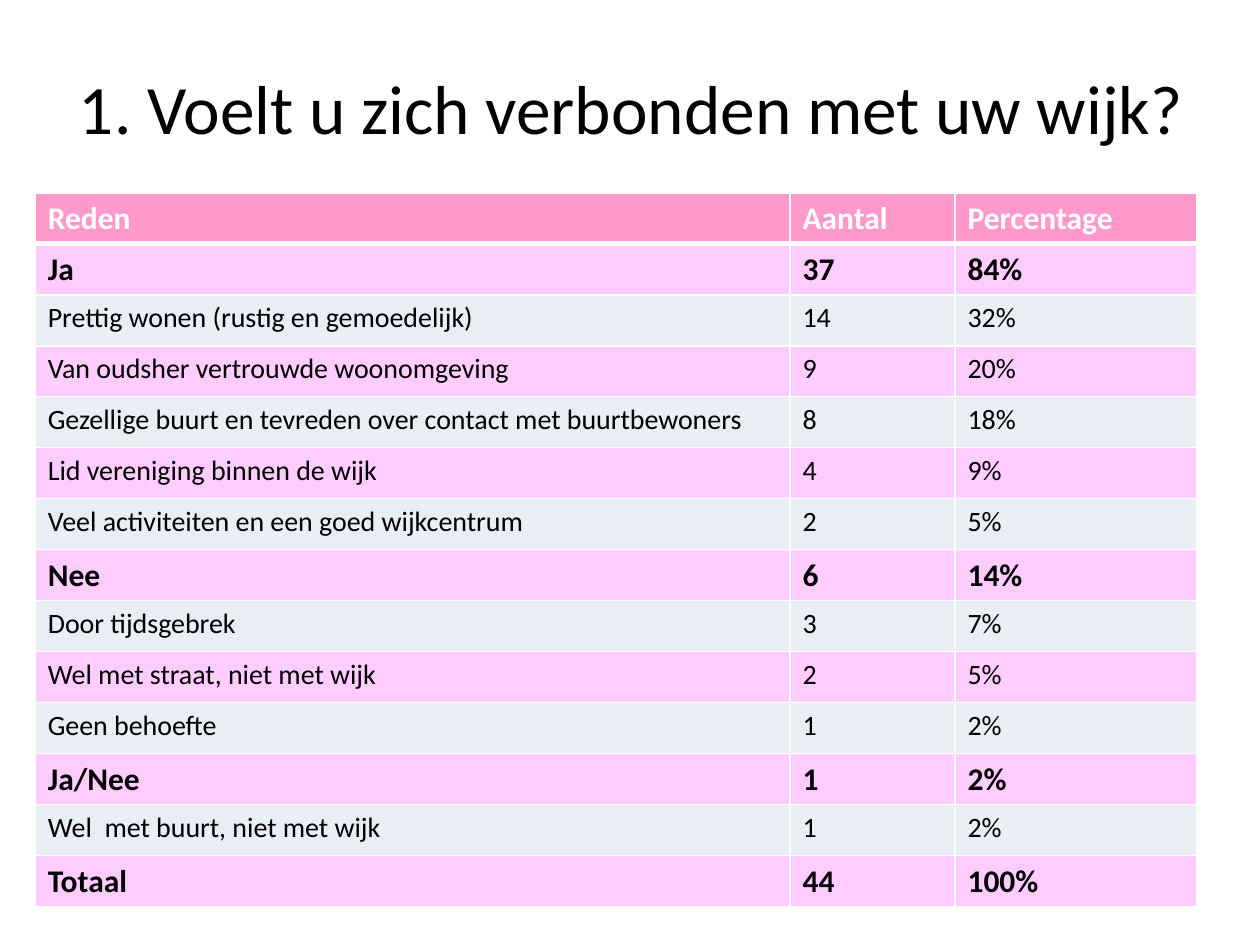
from pptx import Presentation
from pptx.dml.color import RGBColor
from pptx.enum.text import MSO_ANCHOR, PP_ALIGN
from pptx.oxml import parse_xml
from pptx.oxml.ns import nsdecls
from pptx.util import Inches, Pt

TITLE = "1. Voelt u zich verbonden met uw wijk?"
HEADER = ("Reden", "Aantal", "Percentage")
GROUPS = [
    (("Ja", "37", "84%"), [
        ("Prettig wonen (rustig en gemoedelijk)", "14", "32%"),
        ("Van oudsher vertrouwde woonomgeving", "9", "20%"),
        ("Gezellige buurt en tevreden over contact met buurtbewoners", "8", "18%"),
        ("Lid vereniging binnen de wijk", "4", "9%"),
        ("Veel activiteiten en een goed wijkcentrum", "2", "5%"),
    ]),
    (("Nee", "6", "14%"), [
        ("Door tijdsgebrek", "3", "7%"),
        ("Wel met straat, niet met wijk", "2", "5%"),
        ("Geen behoefte", "1", "2%"),
    ]),
    (("Ja/Nee", "1", "2%"), [
        ("Wel  met buurt, niet met wijk", "1", "2%"),
    ]),
    (("Totaal", "44", "100%"), []),
]


def color(value):
    return RGBColor.from_string(value)


def write_text(frame, text, *, font, size, fill, bold=False, align=PP_ALIGN.LEFT):
    paragraph = frame.paragraphs[0]
    paragraph.alignment = align
    run = paragraph.add_run()
    run.text = text
    run.font.name = font
    run.font.size = Pt(size)
    run.font.bold = bold
    run.font.color.rgb = color(fill)


def set_borders(cell, widths, line_color):
    properties = cell._tc.get_or_add_tcPr()
    for index, (side, width) in enumerate(widths.items()):
        border = parse_xml(
            f'<a:{side} {nsdecls("a")} w="{Pt(width)}"><a:solidFill>'
            f'<a:srgbClr val="{line_color}"/></a:solidFill></a:{side}>'
        )
        properties.insert(index, border)


class SurveySlide:
    font = "Calibri"
    ink = "000000"
    white = "FFFFFF"
    header_fill = "FF99CC"
    band_fills = ("E9EDF4", "FFCCFF")

    def __init__(self, presentation):
        self.slide = presentation.slides.add_slide(presentation.slide_layouts[6])

    def add_title(self, text, left, top, width, height):
        shape = self.slide.shapes.add_textbox(
            Inches(left), Inches(top), Inches(width), Inches(height))
        frame = shape.text_frame
        frame.word_wrap = True
        frame.vertical_anchor = MSO_ANCHOR.TOP
        frame.margin_top = 0
        write_text(frame, text, font=self.font, size=39.6, fill=self.ink,
                   align=PP_ALIGN.CENTER)

    def add_table(self, header, groups, left, top, column_widths, height):
        rows = [(header, True)]
        for summary, reasons in groups:
            rows.append((summary, True))
            rows.extend((reason, False) for reason in reasons)
        table = self.slide.shapes.add_table(
            len(rows), len(header), Inches(left), Inches(top),
            Inches(sum(column_widths)), Inches(height)).table
        for column, width in zip(table.columns, column_widths):
            column.width = Inches(width)
        for index, (values, bold) in enumerate(rows):
            for column, value in enumerate(values):
                self.fill_cell(table.cell(index, column), value, index, bold)

    def fill_cell(self, cell, value, row, bold):
        is_header = row == 0
        cell.fill.solid()
        cell.fill.fore_color.rgb = color(
            self.header_fill if is_header else self.band_fills[row % 2])
        write_text(cell.text_frame, value, font=self.font, size=18 if bold else 16,
                   fill=self.white if is_header else self.ink, bold=bold)
        widths = {"lnL": 1, "lnR": 1, "lnT": 3 if row == 1 else 1,
                  "lnB": 3 if is_header else 1}
        set_borders(cell, widths, self.white)


def main():
    presentation = Presentation()
    presentation.slide_width = Inches(10)
    presentation.slide_height = Inches(7.5)
    survey = SurveySlide(presentation)
    survey.add_title(TITLE, 0.51, 0.52, 9, 1.25)
    survey.add_table(HEADER, GROUPS, 0.28, 1.53, (5.99, 1.31, 1.92), 5.67)
    presentation.save("out.pptx")


if __name__ == "__main__":
    main()
